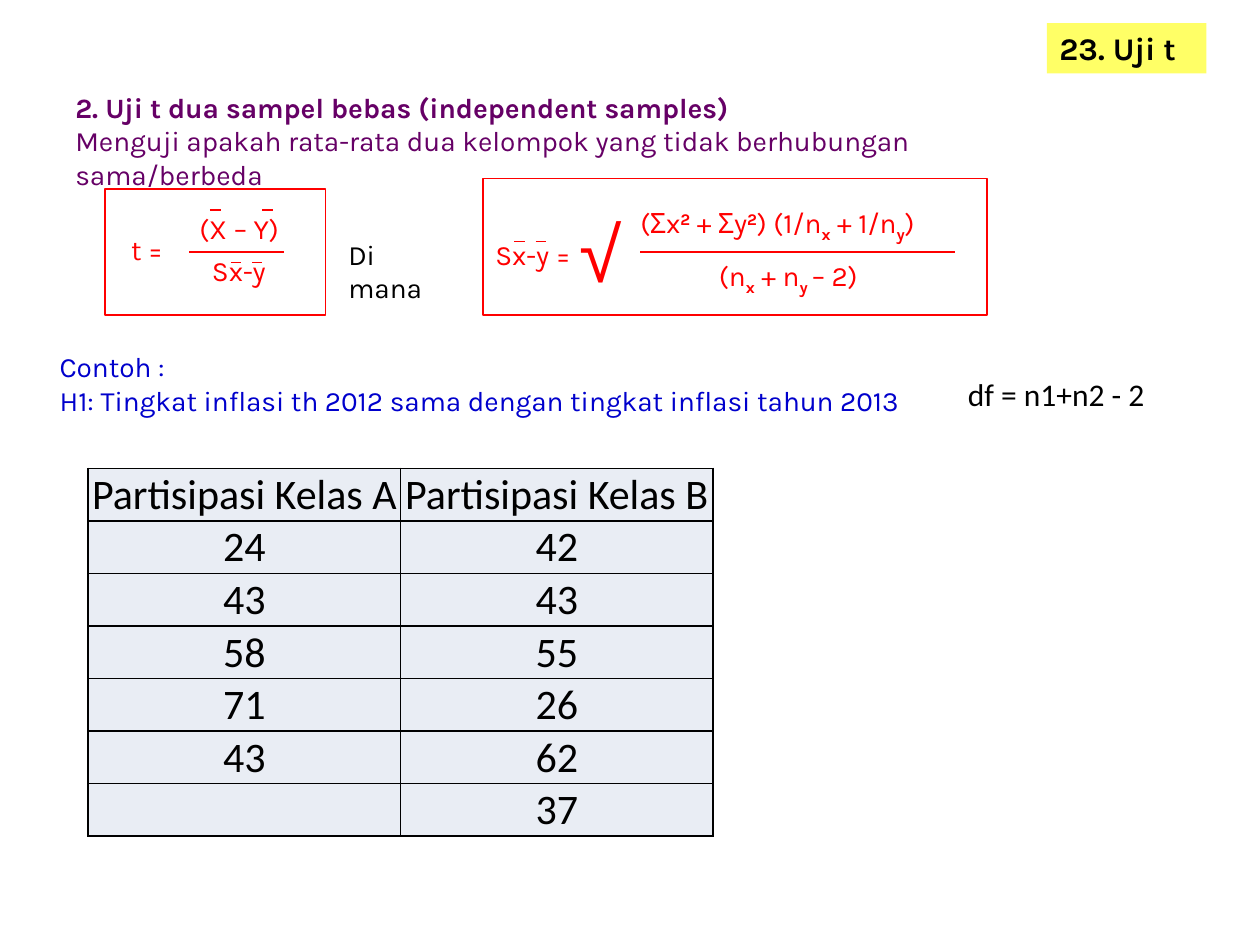
from lxml import etree
from pptx import Presentation
from pptx.dml.color import RGBColor
from pptx.enum.shapes import MSO_CONNECTOR, MSO_SHAPE
from pptx.enum.text import MSO_ANCHOR, MSO_AUTO_SIZE, PP_ALIGN
from pptx.oxml.ns import qn
from pptx.util import Inches, Pt

LINE = MSO_CONNECTOR.STRAIGHT
RECT = MSO_SHAPE.RECTANGLE
TOP, MID = MSO_ANCHOR.TOP, MSO_ANCHOR.MIDDLE
LEFT, CENTER = PP_ALIGN.LEFT, PP_ALIGN.CENTER
FIXED = MSO_AUTO_SIZE.NONE

HUES = {
    "plum": "660066", "red": "FF0000", "blue": "0000CC", "black": "000000",
    "yellow": "FFFF66", "pale": "E9EDF4",
}
COLS, ROWS = 120, 90
SUP, SUB = 30000, -25000

deck = Presentation()
deck.slide_width, deck.slide_height = Inches(10), Inches(7.5)
unit_x, unit_y = deck.slide_width / COLS, deck.slide_height / ROWS
slide = deck.slides.add_slide(deck.slide_layouts[5])
shapes = slide.shapes


def place(x, y, wide, high):
    return int(x * unit_x), int(y * unit_y), int(wide * unit_x), int(high * unit_y)


def write(shape, lines, hue, size=16, face="Karla", bold=()):
    frame = shape.text_frame
    frame.word_wrap = True
    frame.auto_size = FIXED
    frame.vertical_anchor = TOP
    for i, line in enumerate(lines):
        para = frame.add_paragraph() if i else frame.paragraphs[0]
        para.alignment = LEFT
        para.font.name, para.font.size = face, Pt(size)
        para.font.color.rgb = RGBColor.from_string(HUES[hue])
        para.font.bold = i in bold
        for part in [line] if isinstance(line, str) else line:
            text, shift = (part, 0) if isinstance(part, str) else part
            run = para.add_run()
            run.text = text
            if shift:
                run.font.bold = True
                run.font._element.set("baseline", str(shift))


title = shapes.title
title.left, title.top, title.width, title.height = place(99.7, 2.2, 15.2, 4.8)
title.fill.solid()
title.fill.fore_color.rgb = RGBColor.from_string(HUES["yellow"])
write(title, ["23. Uji t"], "black", 18, bold=(0,))

intro = shapes.add_textbox(*place(6, 8, 98.2, 7.7))
write(intro, [
    "2. Uji t dua sampel bebas (independent samples)",
    "Menguji apakah rata-rata dua kelompok yang tidak berhubungan sama/berbeda",
], "plum", bold=(0,))

upper = ["(Σx", ("2", SUP), " + Σy", ("2", SUP), ") (1/n", ("x", SUB),
         " + 1/n", ("y", SUB), ")"]
lower = ["(n", ("x", SUB), " + n", ("y ", SUB), "– 2)"]
for x, y, wide, text, hue in [
    (11.3, 21.6, 6.1, "t =", "red"),
    (17.8, 19.6, 10.7, "(X – Y)", "red"),
    (19, 23.6, 8, "Sx-y", "red"),
    (32, 22, 12.2, "Di mana", "black"),
    (46, 22, 11, "Sx-y =", "red"),
    (59.8, 19, 32.5, upper, "red"),
    (67.3, 24, 17.8, lower, "red"),
]:
    write(shapes.add_textbox(*place(x, y, wide, 4.4)), [text], hue)

root = shapes.add_textbox(*place(54, 19, 10.3, 10))
write(root, ["√"], "red", 44, "Arial")

for x, y, wide in [
    (18, 24, 9), (22, 25, 1), (24, 25, 1), (20, 20, 1), (25, 20, 1),
    (61, 24, 30), (49, 23, 1), (51, 23, 1),
]:
    x, y, wide, high = place(x, y, wide, 0)
    bar = shapes.add_connector(LINE, x, y, x + wide, y)
    bar.line.color.rgb = RGBColor.from_string(HUES["red"])
    bar.line.width = Pt(0.75)
    etree.SubElement(bar._element.spPr, qn("a:effectLst"))

for area in [(10, 18, 21, 12), (46, 17, 48, 13)]:
    box = shapes.add_shape(RECT, *place(*area))
    box.shadow.inherit = False
    box.fill.background()
    box.line.color.rgb = RGBColor.from_string(HUES["red"])
    box.line.width = Pt(0.75)

case = shapes.add_textbox(*place(4.5, 32.7, 108.2, 14.2))
write(case, [
    "Contoh :",
    "H1: Tingkat inflasi th 2012 sama dengan tingkat inflasi tahun 2013",
], "blue")
free = shapes.add_textbox(*place(91, 35.1, 19.8, 4.8))
write(free, ["df = n1+n2 - 2"], "black", 18, "Calibri")

data = [
    ("Partisipasi Kelas A", "Partisipasi Kelas B"),
    ("24", "42"), ("43", "43"), ("58", "55"),
    ("71", "26"), ("43", "62"), ("", "37"),
]
area = place(8.4, 44.6, 59.5, 34.6)
table = shapes.add_table(len(data), 2, *area).table
for row, texts in zip(table.rows, data):
    for cell, text in zip(row.cells, texts):
        cell.margin_left = cell.margin_right = cell.margin_top = Inches(0.01)
        cell.margin_bottom = 0
        cell.vertical_anchor = MID
        para = cell.text_frame.paragraphs[0]
        para.alignment = CENTER
        para.font.name, para.font.size = "Calibri", Pt(24)
        para.font.bold = False
        para.font.color.rgb = RGBColor.from_string(HUES["black"])
        if text:
            para.add_run().text = text
        props = cell._tc.get_or_add_tcPr()
        for side in ("lnL", "lnR", "lnT", "lnB"):
            edge = etree.SubElement(props, qn("a:" + side), w=str(Pt(1)))
            fill = etree.SubElement(edge, qn("a:solidFill"))
            etree.SubElement(fill, qn("a:srgbClr"), val=HUES["black"])
        cell.fill.solid()
        cell.fill.fore_color.rgb = RGBColor.from_string(HUES["pale"])

deck.save("out.pptx")
